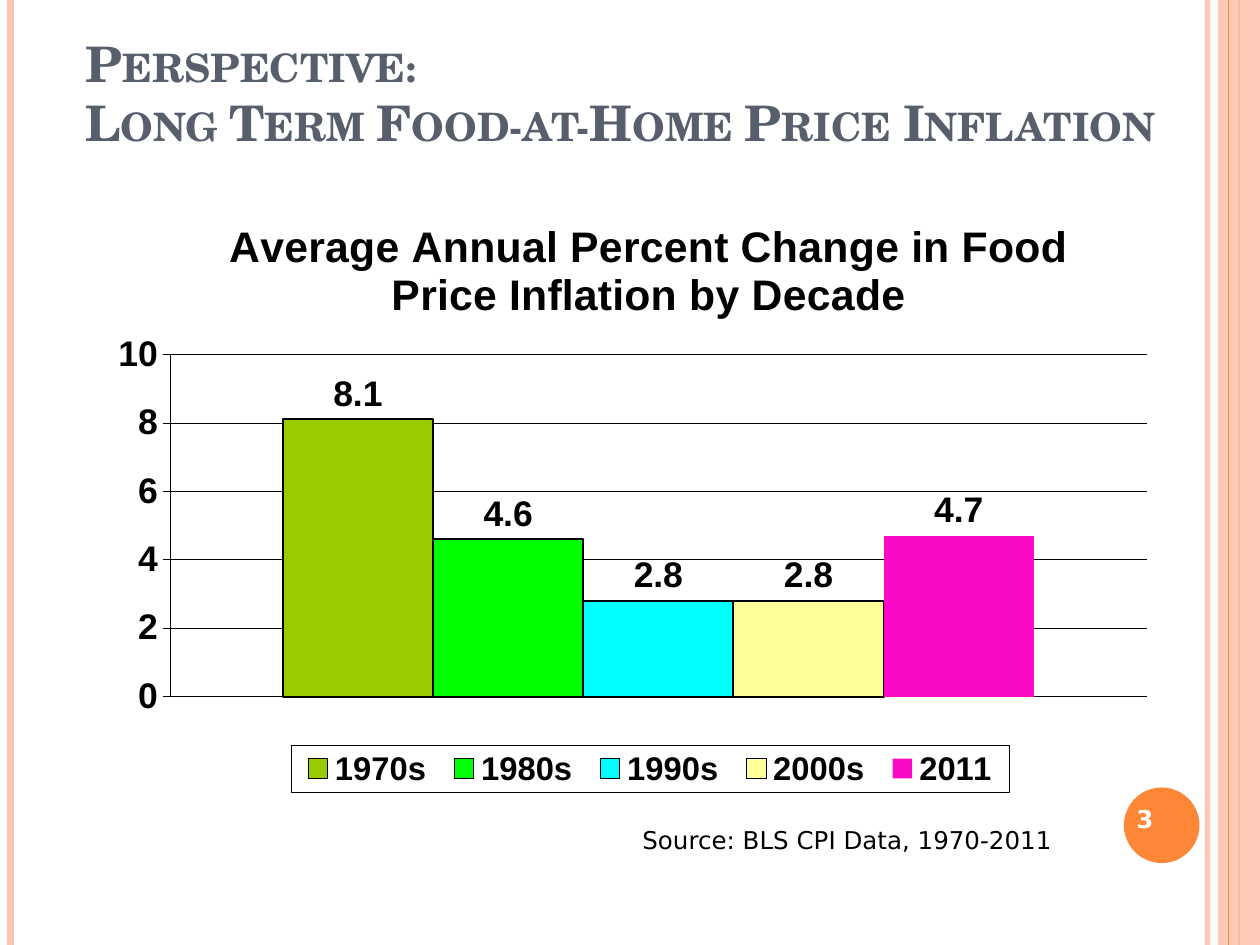
import pptx
import pptx.chart.data
import pptx.dml.color
import pptx.enum.chart
import pptx.enum.shapes
import pptx.enum.text
import pptx.oxml
import pptx.oxml.ns
import pptx.util
from pptx.util import Pt

RGB = pptx.dml.color.RGBColor
BLACK = RGB(0x00, 0x00, 0x00)
WHITE = RGB(0xFF, 0xFF, 0xFF)
SLATE = RGB(0x57, 0x5F, 0x6D)
ORANGE = RGB(0xFE, 0x86, 0x37)
PEACH = RGB(0xFE, 0xC3, 0xAE)
OLIVE = RGB(0x99, 0xCC, 0x00)
GREEN = RGB(0x00, 0xFF, 0x00)
CYAN = RGB(0x00, 0xFF, 0xFF)
YELLOW = RGB(0xFF, 0xFF, 0x99)
PINK = RGB(0xFA, 0x0A, 0xC7)

deck = pptx.Presentation()
deck.slide_width, deck.slide_height = Pt(720), Pt(540)
slide = deck.slides.add_slide(deck.slide_layouts[6])
shapes = slide.shapes


def write(text, left, top, width, height, size=14, font="DejaVu Sans",
          color=BLACK, bold=False, caps=False, wrap=True, anchor="TOP"):
    frame = shapes.add_textbox(Pt(left), Pt(top), Pt(width), Pt(height)).text_frame
    frame.word_wrap = wrap
    frame.vertical_anchor = pptx.enum.text.MSO_ANCHOR[anchor]
    para = frame.paragraphs[0]
    for i, line in enumerate(text.splitlines()):
        if i:
            para.add_line_break()
        run = para.add_run()
        run.text = line
        run.font.size, run.font.name = Pt(size), font
        run.font.bold, run.font.color.rgb = bold, color
        if caps:
            run.font._element.set("cap", "small")


def place(part, x, y, w=None, h=None, inner=False):
    """Set the manual layout of a chart part, in shares of the chart."""
    tags = [("layoutTarget", "inner")] if inner else []
    tags += [("xMode", "edge"), ("yMode", "edge"), ("x", x), ("y", y)]
    if w:
        tags += [("w", w), ("h", h)]
    body = "".join(f'<c:{tag} val="{val}"/>' for tag, val in tags)
    new = pptx.oxml.parse_xml(
        f'<c:layout {pptx.oxml.ns.nsdecls("c")}><c:manualLayout>{body}'
        '</c:manualLayout></c:layout>')
    for old in part.findall(pptx.oxml.ns.qn("c:layout")):
        part.remove(old)
    before = part.find(pptx.oxml.ns.qn("c:legendPos"))
    if before is None:
        before = part.find(pptx.oxml.ns.qn("c:tx"))
    if before is None:
        part.insert(0, new)
    else:
        before.addnext(new)


# Side stripes: x, width, color, opacity; the band lies below the last line
stripes = [(690, 3, PEACH, 93), (6, 4.5, PEACH, 100), (708, 1.5, ORANGE, 100),
           None, (702, 0.75, ORANGE, 100)]
for stripe in stripes:
    if stripe is None:
        band = shapes.add_shape(pptx.enum.shapes.MSO_SHAPE.RECTANGLE,
                                Pt(696), Pt(0), Pt(24), Pt(540))
        band.shadow.inherit = False
        band.fill.solid()
        band.fill.fore_color.rgb = PEACH
        band.line.fill.background()
        part, clear = band, 87
    else:
        x, width, color, clear = stripe
        part = shapes.add_connector(pptx.enum.shapes.MSO_CONNECTOR.STRAIGHT,
                                    Pt(x), Pt(0), Pt(x), Pt(540))
        part.line.width, part.line.color.rgb = Pt(width), color
        pptx.oxml.xmlchemy.OxmlElement("a:effectLst")
        part._element.spPr.append(pptx.oxml.xmlchemy.OxmlElement("a:effectLst"))
    if clear < 100:
        alpha = pptx.oxml.xmlchemy.OxmlElement("a:alpha")
        alpha.set("val", str(clear * 1000))
        part._element.spPr.find(".//" + pptx.oxml.ns.qn("a:srgbClr")).append(alpha)

# Page number
disc = shapes.add_shape(pptx.enum.shapes.MSO_SHAPE.OVAL,
                        Pt(642.24), Pt(450), Pt(43.2), Pt(43.2))
disc.shadow.inherit = False
disc.fill.solid()
disc.fill.fore_color.rgb = ORANGE
disc.line.fill.background()
write("3", 642.24, 455.76, 42.48, 24.5, color=WHITE, bold=True, wrap=False)

# Title
write("Perspective:\nLong Term Food-at-Home Price Inflation", 41.76, 0, 648, 90,
      size=28, font="TeX Gyre Schola", color=SLATE, bold=True, caps=True,
      anchor="BOTTOM")

# Chart
bars = [("1970s", 8.1, OLIVE), ("1980s", 4.6, GREEN), ("1990s", 2.8, CYAN),
        ("2000s", 2.8, YELLOW), ("2011", 4.7, PINK)]
data = pptx.chart.data.CategoryChartData()
data.categories = ["1"]
for name, value, color in bars:
    data.add_series(name, [value])
chart = shapes.add_chart(pptx.enum.chart.XL_CHART_TYPE.COLUMN_CLUSTERED,
                         Pt(51.84), Pt(105.84), Pt(622.08), Pt(354.24), data).chart
chart.font.size, chart.font.name = Pt(20.3), "Arial"
chart.font.bold, chart.font.color.rgb = True, BLACK

chart.has_title = True
head = chart.chart_title.text_frame
head.text = "Average Annual Percent Change in Food Price Inflation by Decade"
font = head.paragraphs[0].runs[0].font
font.size, font.name, font.bold, font.color.rgb = Pt(24.4), "Arial", True, BLACK
place(chart.chart_title._element, 0.12, 0.04)

# Bars and their labels
plot = chart.plots[0]
plot.gap_width, plot.overlap, plot.vary_by_categories = 150, 0, False
for row, (name, value, color) in zip(plot.series, bars):
    row.format.fill.solid()
    row.format.fill.fore_color.rgb = color
    if color == PINK:
        row.format.line.fill.background()
    else:
        row.format.line.width, row.format.line.color.rgb = Pt(1.13), BLACK
    tags = row.data_labels
    tags.show_value = True
    tags.position = pptx.enum.chart.XL_LABEL_POSITION.OUTSIDE_END
    tags.font.size, tags.font.name = Pt(20.3), "Arial"
    tags.font.bold, tags.font.color.rgb = True, BLACK
place(chart._chartSpace.chart.plotArea, 0.073, 0.273, 0.897, 0.552, inner=True)

# Axes
chart.category_axis.visible = False
axis = chart.value_axis
axis.minimum_scale, axis.maximum_scale, axis.major_unit = 0, 10, 2
axis.major_tick_mark = pptx.enum.chart.XL_TICK_MARK.OUTSIDE
axis.has_major_gridlines = True
for line in (axis.format.line, axis.major_gridlines.format.line):
    line.width, line.color.rgb = Pt(0.28), BLACK

# Legend
chart.has_legend = True
legend = chart.legend
legend.position = pptx.enum.chart.XL_LEGEND_POSITION.BOTTOM
legend.include_in_layout = False
legend.font.size, legend.font.name = Pt(18.7), "Arial"
legend.font.bold, legend.font.color.rgb = True, BLACK
place(legend._element, 0.184, 0.903, 0.66, 0.076)
frame = pptx.oxml.parse_xml(
    f'<c:spPr {pptx.oxml.ns.nsdecls("c", "a")}><a:ln w="3556"><a:solidFill>'
    f'<a:srgbClr val="{BLACK}"/></a:solidFill></a:ln></c:spPr>')
legend._element.find(pptx.oxml.ns.qn("c:txPr")).addprevious(frame)

# Source note
write("Source: BLS CPI Data, 1970-2011", 360, 468, 264, 24.5)

deck.save("out.pptx")
